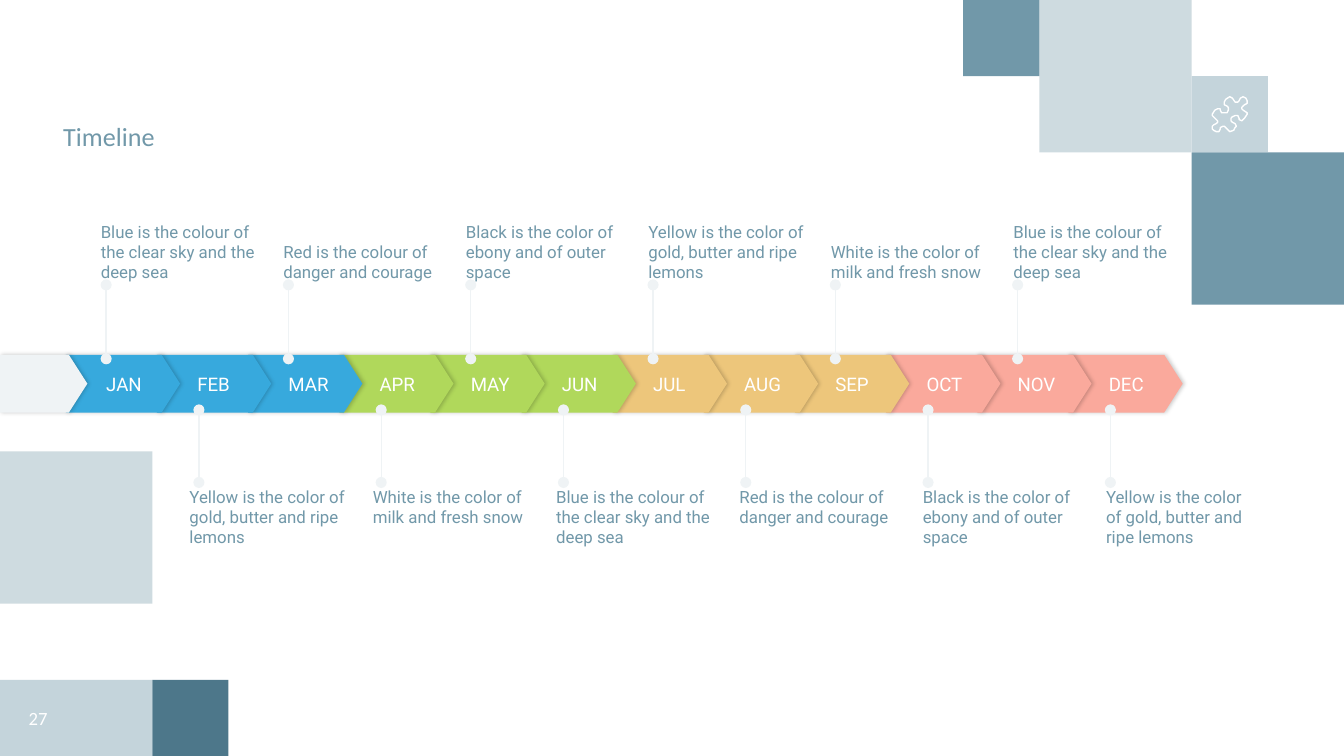
"""Build a twelve-month timeline slide with notes above and below the months."""
import pptx
import pptx.dml.color
import pptx.enum.shapes
import pptx.enum.text
import pptx.oxml
import pptx.oxml.ns
import pptx.util

Inches = pptx.util.Inches
Pt = pptx.util.Pt
Shape = pptx.enum.shapes.MSO_SHAPE
Anchor = pptx.enum.text.MSO_ANCHOR
Align = pptx.enum.text.PP_ALIGN
rgb = pptx.dml.color.RGBColor.from_string
namespace = pptx.oxml.ns.nsdecls("a")

COLORS = {
    "steel": "7198A9", "mist": "CEDBE0", "deep": "4D778A", "pale": "EFF3F5",
    "white": "FFFFFF", "blue": "37A9DD", "green": "B0D85B",
    "sand": "EDC67B", "coral": "FAA99C",
}
SHADOW = (
    f'<a:effectLst {namespace}><a:outerShdw blurRad="{Pt(2.2)}" dist="{Pt(0.8)}" dir="0" '
    'algn="l" rotWithShape="0"><a:srgbClr val="000000"><a:alpha val="20000"/>'
    "</a:srgbClr></a:outerShdw></a:effectLst>"
)


def add_block(kind, left, top, width, height, color):
    block = page.shapes.add_shape(
        kind, Inches(left), Inches(top), Inches(width), Inches(height))
    block.shadow.inherit = False
    block.fill.solid()
    block.fill.fore_color.rgb = rgb(COLORS[color])
    block.line.fill.background()
    return block


def write_text(shape, text, size, font, color, anchor, align=Align.LEFT, insets=(0, 0, 0, 0)):
    frame = shape.text_frame
    frame.word_wrap = True
    frame.vertical_anchor = anchor
    frame.margin_left, frame.margin_top, frame.margin_right, frame.margin_bottom = map(
        Inches, insets)
    paragraph = frame.paragraphs[0]
    paragraph.text = text
    paragraph.alignment = align
    paragraph.font.size = Pt(size)
    paragraph.font.name = font
    paragraph.font.color.rgb = rgb(COLORS[color])


page_width = 10
page_height = page_width * 9 / 16
deck = pptx.Presentation()
deck.slide_width = Inches(page_width)
deck.slide_height = Inches(page_height)
page = deck.slides.add_slide(deck.slide_layouts[6])

unit = 1.7 / 3
bottom = page_height - unit
squares = [
    (page_width - 2 * unit, 2 * unit, 2, 2, "steel", 100),
    (page_width - 2 * unit, unit, 1, 1, "steel", 41),
    (page_width - 4 * unit, 0, 2, 2, "mist", 100),
    (page_width - 5 * unit, 0, 1, 1, "steel", 100),
    (0, page_height - 4 * unit, 2, 2, "mist", 100),
    (2 * unit, bottom, 1, 1, "deep", 100),
    (0, bottom, 2, 1, "steel", 41),
]
for left, top, columns, lines, color, opacity in squares:
    square = add_block(Shape.RECTANGLE, left, top, columns * unit, lines * unit, color)
    if opacity < 100:
        tint = square.fill._xPr.find(".//" + pptx.oxml.ns.qn("a:srgbClr"))
        tint.append(pptx.oxml.parse_xml(f'<a:alpha {namespace} val="{opacity * 1000}"/>'))

puzzle_outline = [
    (23, 7), (24, 6), (26, 5), (26, 3), (25, 1), (23, 0), (21, 1), (20, 3), (19, 4),
    (17, 4), (15, 1), (13, 0), (10, 2), (9, 4), (9, 6), (11, 7), (12, 8), (12, 10),
    (11, 12), (9, 12), (7, 12), (6, 10), (6, 9), (4, 9), (2, 10), (0, 13), (0, 14),
    (3, 17), (4, 18), (4, 19), (3, 20), (1, 21), (0, 22), (0, 24), (1, 25), (3, 26),
    (5, 26), (6, 24), (6, 23), (8, 22), (9, 22), (12, 25), (13, 26), (16, 25),
    (17, 23), (18, 22), (17, 20), (15, 19), (14, 18), (14, 16), (15, 15), (17, 14),
    (19, 14), (20, 16), (20, 17), (22, 18), (24, 16), (26, 13), (26, 12), (23, 10),
    (22, 9), (22, 8),
]
builder = page.shapes.build_freeform(*puzzle_outline[0], scale=Inches(0.01))
builder.add_line_segments(puzzle_outline[1:], close=True)
puzzle = builder.convert_to_shape(Inches(9.02), Inches(0.72))
puzzle.shadow.inherit = False
puzzle.fill.background()
puzzle.line.color.rgb = rgb(COLORS["white"])
puzzle.line.width = Pt(0.75)

title = page.shapes.add_textbox(Inches(0.47), Inches(0.72), Inches(4.5), Inches(0.41))
write_text(title, "Timeline", 14, "Calibri", "steel", Anchor.BOTTOM)
number = page.shapes.add_textbox(Inches(0), Inches(bottom), Inches(unit), Inches(unit))
write_text(number, "27", 10, "Calibri", "white", Anchor.MIDDLE, Align.CENTER, (0.1,) * 4)

months = ["JAN", "FEB", "MAR", "APR", "MAY", "JUN",
          "JUL", "AUG", "SEP", "OCT", "NOV", "DEC"]
quarter_colors = ["blue", "green", "sand", "coral"]
pitch = (7.95 - 0.49) / 11
arrows = [(0.49 + pitch * index, 0.85, quarter_colors[index // 3], month)
          for index, month in enumerate(months)]
arrows.insert(0, (0, 0.65, "pale", ""))
for left, width, color, month in reversed(arrows):
    arrow = add_block(Shape.PENTAGON, left, 2.64, width, 0.43, color)
    arrow.adjustments[0] = 0.32
    properties = arrow._element.spPr
    properties.remove(properties.find(pptx.oxml.ns.qn("a:effectLst")))
    properties.append(pptx.oxml.parse_xml(SHADOW))
    if month:
        write_text(arrow, month, 10, "Roboto", "white", Anchor.MIDDLE, insets=(0.3, 0, 0, 0))

blue = "Blue is the colour of the clear sky and the deep sea"
red = "Red is the colour of danger and courage"
black = "Black is the color of ebony and of outer space"
yellow = "Yellow is the color of gold, butter and ripe lemons"
white = "White is the color of milk and fresh snow"
rows = [
    ([blue, red, black, yellow, white, blue], 0.79, 2.67, 2.12,
     0.75, (7.54 - 0.75) / 5, 1.52, Anchor.BOTTOM),
    ([yellow, white, blue, red, black, yellow], 1.48, 3.59, 3.05,
     1.41, (8.23 - 1.41) / 5, 3.62, Anchor.TOP),
]
for notes, line_left, start, end, note_left, note_step, note_top, anchor in rows:
    for index, note in enumerate(notes):
        x = Inches(line_left + 2 * pitch * index)
        stem = page.shapes.add_connector(
            pptx.enum.shapes.MSO_CONNECTOR.STRAIGHT, x, Inches(start), x, Inches(end))
        stem.line.color.rgb = rgb(COLORS["pale"])
        stem.line.width = Pt(0.75)
        for tag in ("headEnd", "tailEnd"):
            stem.line._ln.append(pptx.oxml.parse_xml(f'<a:{tag} {namespace} type="oval"/>'))
        stem._element.spPr.append(pptx.oxml.parse_xml(f"<a:effectLst {namespace}/>"))

        left = note_left + note_step * index
        width = min(1.28, 9.29 - left)
        box = page.shapes.add_textbox(
            Inches(left), Inches(note_top), Inches(width), Inches(0.58))
        write_text(box, note, 9, "Roboto", "steel", anchor)

deck.save("out.pptx")
